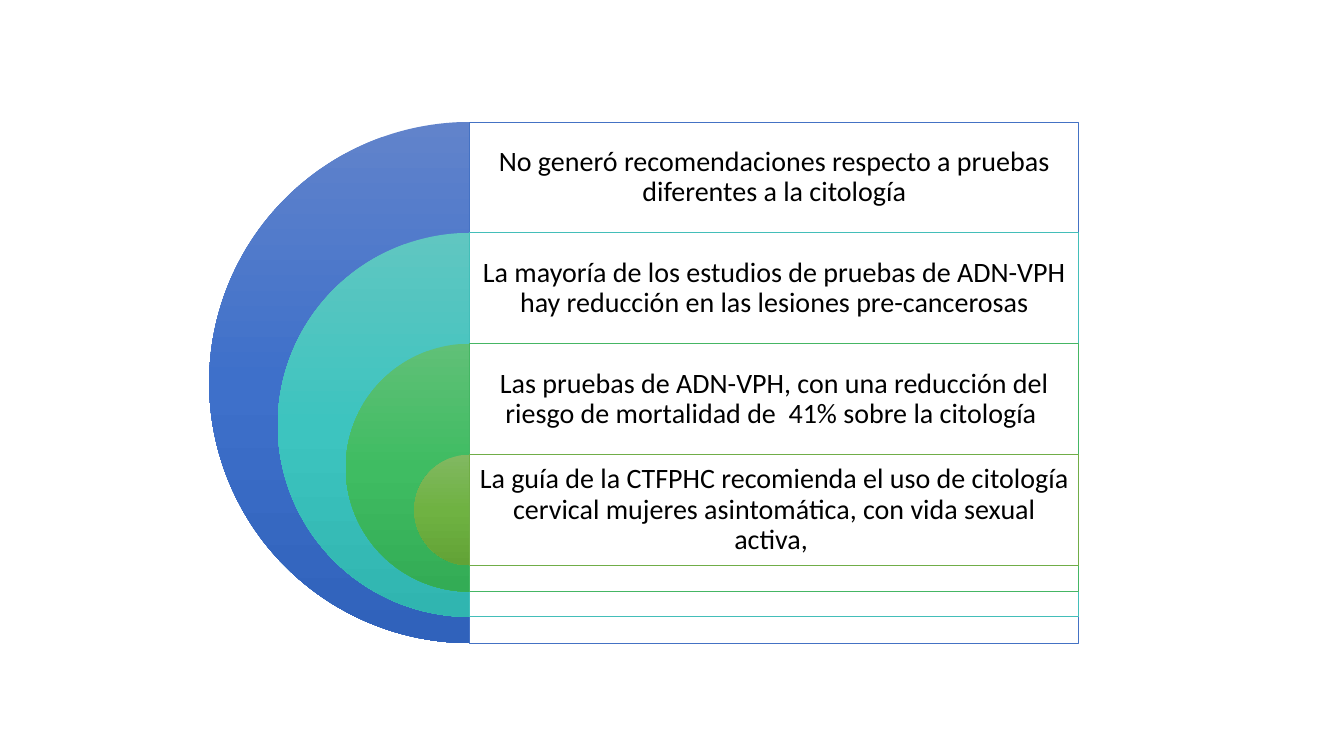
import copy
from dataclasses import dataclass

import lxml.etree
import pptx
import pptx.dml.color
import pptx.enum.shapes
import pptx.enum.text
import pptx.oxml.ns
import pptx.shapes.autoshape
import pptx.slide
import pptx.util

RGB = pptx.dml.color.RGBColor
SHAPE = pptx.enum.shapes.MSO_SHAPE
qn = pptx.oxml.ns.qn

BLACK = RGB(0x00, 0x00, 0x00)
WHITE = RGB(0xFF, 0xFF, 0xFF)
BLUE = RGB(0x44, 0x72, 0xC4)
BLUES = (RGB(0x61, 0x83, 0xCB), RGB(0x3E, 0x70, 0xCA), RGB(0x30, 0x62, 0xBB))
TEAL = RGB(0x43, 0xBE, 0xB9)
TEALS = (RGB(0x60, 0xC6, 0xC1), RGB(0x3D, 0xC4, 0xBF), RGB(0x30, 0xB5, 0xB0))
GREEN = RGB(0x45, 0xB6, 0x64)
GREENS = (RGB(0x60, 0xC0, 0x77), RGB(0x3F, 0xBC, 0x62), RGB(0x33, 0xAC, 0x55))
OLIVE = RGB(0x70, 0xAD, 0x47)
OLIVES = (RGB(0x81, 0xB8, 0x61), RGB(0x6F, 0xB2, 0x42), RGB(0x62, 0xA3, 0x36))

SCALE = 9144  # EMU in one px, at 100 px to the inch
MID, TOP = 466, 121
WIDE, ROW = 604, 110
OUTER = 517
INSET = 8


@dataclass(frozen=True)
class Ring:
    text: str
    line: RGB
    shades: tuple[RGB, RGB, RGB]


RINGS = [
    Ring("No generó recomendaciones respecto a pruebas diferentes a la citología",
         BLUE, BLUES),
    Ring("La mayoría de los estudios de pruebas de ADN-VPH hay reducción en las "
         "lesiones pre-cancerosas", TEAL, TEALS),
    Ring("Las pruebas de ADN-VPH, con una reducción del riesgo de mortalidad de  "
         "41% sobre la citología ", GREEN, GREENS),
    Ring("La guía de la CTFPHC recomienda el uso de citología cervical mujeres "
         "asintomática, con vida sexual activa, ", OLIVE, OLIVES),
]


def px(count: int) -> pptx.util.Emu:
    return pptx.util.Emu(count * SCALE)


def shade(shape: pptx.shapes.autoshape.Shape, shades: tuple[RGB, ...]) -> None:
    """Fill from top to bottom with three evenly spaced colours."""
    fill = shape.fill
    fill.gradient()
    fill.gradient_angle = 270
    stops = shape.element.spPr.find(".//" + qn("a:gsLst"))
    stops.insert(1, copy.deepcopy(stops[0]))
    for i, (stop, color) in enumerate(zip(fill.gradient_stops, shades)):
        stop.position = i / 2
        stop.color.rgb = color


def add_pie(slide: pptx.slide.Slide, ring: Ring, top: int, size: int) -> None:
    pie = slide.shapes.add_shape(
        SHAPE.PIE, px(MID) - px(size) // 2, px(top), px(size), px(size))
    pie.shadow.inherit = False
    pie.adjustments[0] = 54
    pie.adjustments[1] = 162
    shade(pie, ring.shades)
    pie.line.fill.background()


def add_panel(slide: pptx.slide.Slide, ring: Ring, top: int, high: int) -> None:
    panel = slide.shapes.add_shape(
        SHAPE.RECTANGLE, px(MID), px(top), px(WIDE), px(high))
    panel.shadow.inherit = False
    panel.fill.solid()
    panel.fill.fore_color.rgb = WHITE
    color = panel.element.spPr.find(qn("a:solidFill") + "/" + qn("a:srgbClr"))
    lxml.etree.SubElement(color, qn("a:alpha"), val="90000")
    panel.line.color.rgb = ring.line
    panel.line.width = pptx.util.Pt(0.5)


def add_text(slide: pptx.slide.Slide, text: str, top: int) -> None:
    box = slide.shapes.add_textbox(px(MID), px(top), px(WIDE), px(ROW))
    frame = box.text_frame
    frame.word_wrap = True
    frame.vertical_anchor = pptx.enum.text.MSO_ANCHOR.MIDDLE
    frame.margin_left = frame.margin_right = px(INSET)
    frame.margin_top = frame.margin_bottom = px(INSET)
    frame.text = text
    para = frame.paragraphs[0]
    para.alignment = pptx.enum.text.PP_ALIGN.CENTER
    para.line_spacing = 0.9
    para.space_after = pptx.util.Pt(7)
    font = para.runs[0].font
    font.name = "Calibri"
    font.size = pptx.util.Pt(20)
    font.color.rgb = BLACK


def main() -> None:
    deck = pptx.Presentation()
    deck.slide_width, deck.slide_height = px(1333), px(750)
    slide = deck.slides.add_slide(deck.slide_layouts[6])
    shrink = (OUTER - ROW) / (len(RINGS) - 1)
    for i, ring in enumerate(RINGS):
        top = TOP + i * ROW
        size = round(OUTER - i * shrink)
        add_pie(slide, ring, top, size)
        add_panel(slide, ring, top, size)
        add_text(slide, ring.text, top)
    deck.save("out.pptx")


if __name__ == "__main__":
    main()
